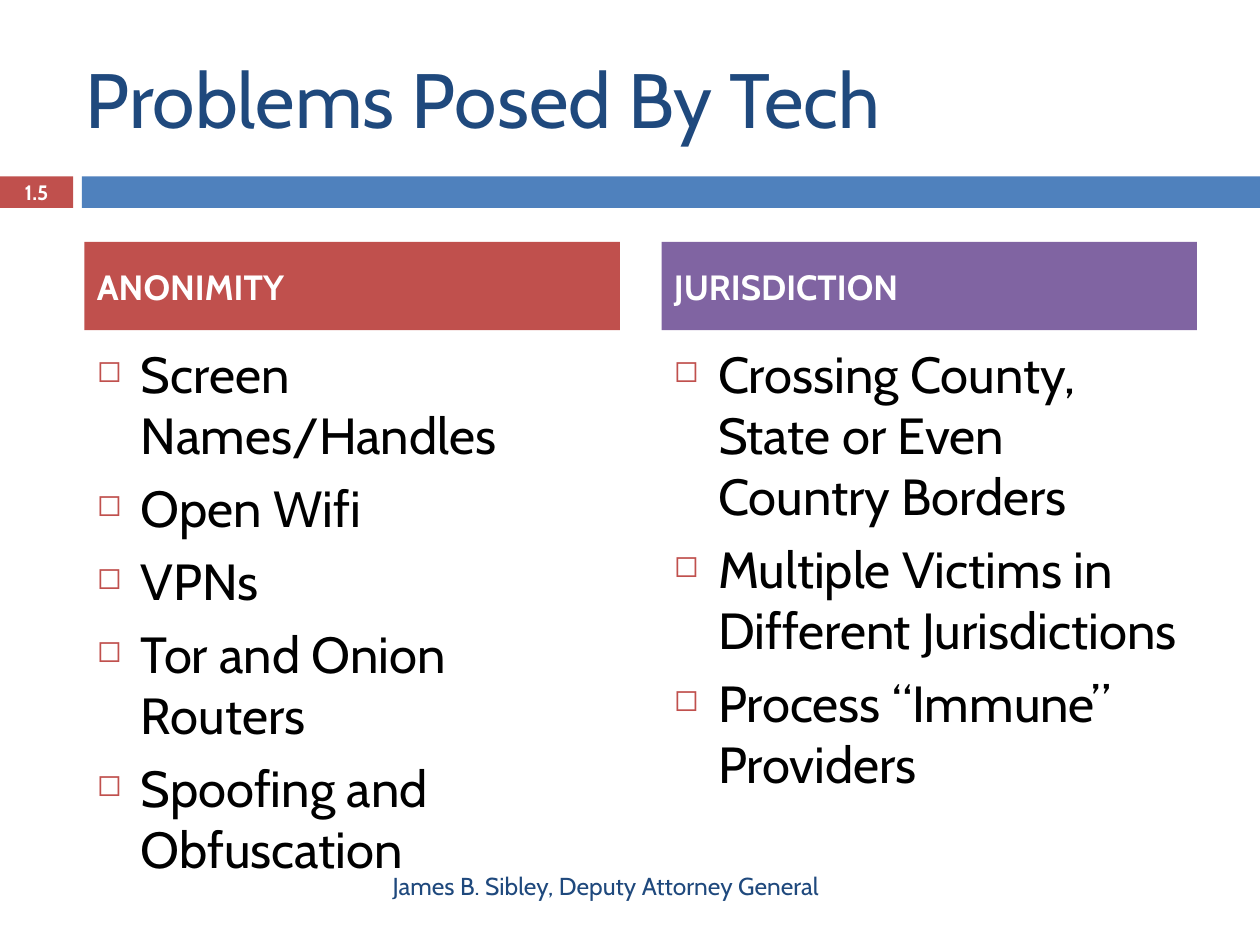
from lxml import etree
from pptx import Presentation
from pptx import util as u
from pptx.dml.color import RGBColor
from pptx.enum import shapes, text
from pptx.oxml.ns import qn

PX = 9144
C = {"navy": "1F497D", "blue": "4F81BD", "red": "C0504D",
     "purple": "8064A2", "white": "FFFFFF", "black": "000000"}
A, M = text.PP_ALIGN, text.MSO_ANCHOR


def write(sp, lines, size, color, bold=False, align=A.LEFT, anchor=M.MIDDLE, bullet=False):
    tf = sp.text_frame
    for k, v in {"word_wrap": True, "auto_size": text.MSO_AUTO_SIZE.NONE,
                 "vertical_anchor": anchor}.items():
        setattr(tf, k, v)
    for i, line in enumerate(lines):
        p = tf.paragraphs[0] if i == 0 else tf.add_paragraph()
        p.alignment = align
        if i:
            p.space_before = u.Pt(7)
        if bullet:
            pPr = p._p.get_or_add_pPr()
            pPr.set("marL", str(35 * PX))
            pPr.set("indent", str(-35 * PX))
            clr = etree.SubElement(pPr, qn("a:buClr"))
            etree.SubElement(clr, qn("a:srgbClr"), val=C["red"])
            etree.SubElement(pPr, qn("a:buSzPct"), val="60000")
            etree.SubElement(pPr, qn("a:buChar"), char="◻")
        r = p.add_run()
        r.text = line
        for k, v in {"name": "Cabin", "size": u.Pt(size), "bold": bold}.items():
            setattr(r.font, k, v)
        r.font.color.rgb = RGBColor.from_string(C[color])


def rect(x, y, w, h, color):
    sp = s.shapes.add_shape(shapes.MSO_SHAPE.RECTANGLE, x * PX, y * PX, w * PX, h * PX)
    sp.shadow.inherit = False
    sp.fill.solid()
    sp.fill.fore_color.rgb = RGBColor.from_string(C[color])
    sp.line.fill.background()
    return sp


prs = Presentation()
prs.slide_width, prs.slide_height = 1000 * PX, 750 * PX
s = prs.slides.add_slide(prs.slide_layouts[5])

title = s.shapes.title
for k, v in {"left": 58, "top": 30, "width": 892, "height": 95}.items():
    setattr(title, k, v * PX)
write(title, ["Problems Posed By Tech"], 44, "navy")

number = rect(0, 140, 58, 25, "red")
write(number, ["1.5"], 11.9, "white", bold=True, align=A.CENTER)
rect(65, 140, 935, 25, "blue")

columns = [
    ("ANONIMITY", "red", ["Screen Names/Handles", "Open Wifi", "VPNs",
                          "Tor and Onion Routers", "Spoofing and Obfuscation"]),
    ("JURISDICTION", "purple", ["Crossing County, State or Even Country Borders",
                                "Multiple Victims in Different Jurisdictions",
                                "Process “Immune” Providers"]),
]
for i, (heading, color, items) in enumerate(columns):
    x = 67 + 458 * i
    write(rect(x, 192, 425, 70, color), [heading], 20, "white", bold=True)
    body = s.shapes.add_textbox(x * PX, 267 * PX, 425 * PX, 392 * PX)
    write(body, items, 29, "black", anchor=M.TOP, bullet=True)

footer = s.shapes.add_textbox(67 * PX, 683 * PX, 593 * PX, 40 * PX)
write(footer, ["James B. Sibley, Deputy Attorney General"], 14, "navy", align=A.RIGHT)

prs.save("out.pptx")
